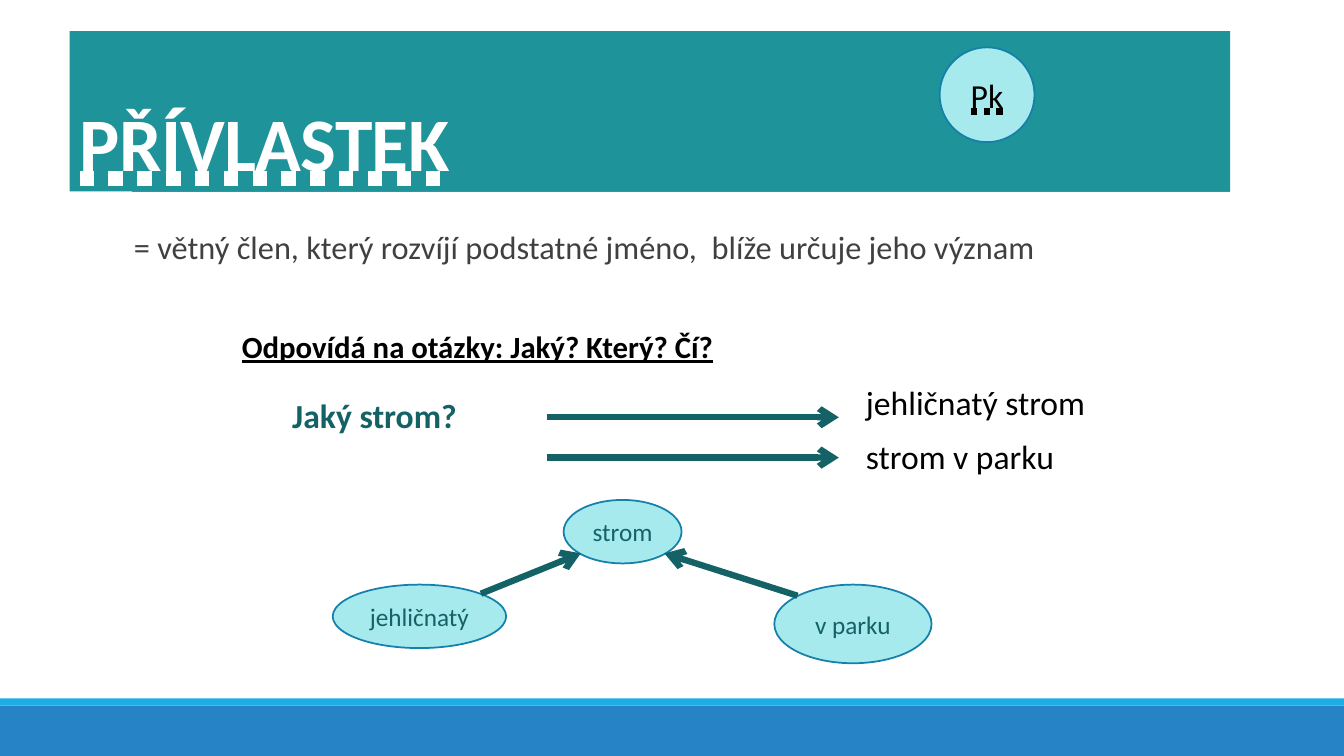
import pptx
import pptx.dml.color
import pptx.enum.shapes
import pptx.enum.text
import pptx.oxml.ns
import pptx.util
from lxml import etree

Inches, Pt = pptx.util.Inches, pptx.util.Pt
ANCHOR = pptx.enum.text.MSO_ANCHOR
ALIGN = pptx.enum.text.PP_ALIGN
DOTTED = pptx.enum.text.MSO_UNDERLINE.DOTTED_HEAVY_LINE
SHAPE = pptx.enum.shapes.MSO_SHAPE

DARK_TEAL, TEAL, PALE_TEAL = "146266", "1E9399", "A6EAEE"
OUTLINE, GREY, BLACK, WHITE = "1580A9", "404040", "000000", "FFFFFF"

HEADING = "PŘÍVLASTEK"
FOOTER_BANDS = [((0, 7, 13.33, 0.5), "2683C6"), ((0, 6.93, 13.33, 0.07), "1CADE4")]
TITLE_RULE = ((1.31, 1.9), (12.2, 1.9))

# text, left, top, width, font size, colour, bold, underline
LINES = [
    ("= větný člen, který rozvíjí podstatné jméno,  blíže určuje jeho význam",
     1.23, 2.2, 9.2, 23.1, GREY, False, False),
    ("Odpovídá na otázky: Jaký? Který? Čí?", 2.3, 3.18, 5.78, 22, BLACK, True, True),
    ("Jaký strom?", 2.8, 3.87, 2.4, 24, DARK_TEAL, True, False),
    ("jehličnatý strom", 8.49, 3.74, 2.4, 24, BLACK, False, False),
    ("strom v parku", 8.49, 4.27, 2.4, 24, BLACK, False, False),
]
LINE_HEIGHT = 0.5

# text, box, font size, colour, underline
BUBBLES = [
    ("strom", (5.59, 4.96, 1.17, 0.63), 18, DARK_TEAL, False),
    ("jehličnatý", (3.3, 5.8, 1.72, 0.63), 18, DARK_TEAL, False),
    ("v parku", (7.68, 5.8, 1.56, 0.78), 18, DARK_TEAL, False),
    ("Pk", (9.32, 0.47, 0.94, 0.94), 24, BLACK, DOTTED),
]
ARROWS = [
    ((4.77, 5.89), (5.76, 5.49)),
    ((7.91, 5.91), (6.59, 5.49)),
    ((5.43, 4.54), (8.32, 4.54)),
    ((5.43, 4.14), (8.32, 4.14)),
]


def rgb(value):
    return pptx.dml.color.RGBColor.from_string(value)


def fill(shape, colour):
    shape.fill.solid()
    shape.fill.fore_color.rgb = rgb(colour)


def style(paragraph, size, colour, bold=False, underline=False):
    font = paragraph.font
    font.name, font.size = "Calibri", Pt(size)
    font.bold, font.color.rgb = bold, rgb(colour)
    if underline:
        paragraph.runs[0].font.underline = underline


def add_shape(slide, kind, box, colour):
    shape = slide.shapes.add_shape(kind, *map(Inches, box))
    shape.shadow.inherit = False
    fill(shape, colour)
    shape.line.fill.background()
    return shape


def add_line(slide, start, end, colour, width):
    line = slide.shapes.add_connector(
        pptx.enum.shapes.MSO_CONNECTOR.STRAIGHT, *map(Inches, start + end))
    line.line.color.rgb = rgb(colour)
    line.line.width = Pt(width)
    etree.SubElement(line._element.spPr, pptx.oxml.ns.qn("a:effectLst"))
    return line


def add_arrow(slide, start, end):
    arrow = add_line(slide, start, end, DARK_TEAL, 4.5)
    outline = arrow.line._get_or_add_ln()
    etree.SubElement(outline, pptx.oxml.ns.qn("a:tailEnd"), type="arrow")


def add_bubble(slide, text, box, size, colour, underline):
    bubble = add_shape(slide, SHAPE.OVAL, box, PALE_TEAL)
    bubble.line.color.rgb = rgb(OUTLINE)
    bubble.line.width = Pt(1.25)
    frame = bubble.text_frame
    frame.text = text
    frame.word_wrap = False
    frame.vertical_anchor = ANCHOR.MIDDLE
    frame.paragraphs[0].alignment = ALIGN.CENTER
    style(frame.paragraphs[0], size, colour, underline=underline)


def add_text(slide, text, left, top, width, size, colour, bold, underline):
    frame = slide.shapes.add_textbox(
        *map(Inches, (left, top, width, LINE_HEIGHT))).text_frame
    frame.text = text
    frame.word_wrap = True
    frame.vertical_anchor = ANCHOR.MIDDLE
    style(frame.paragraphs[0], size, colour, bold, underline)


def format_title(title):
    title.left, title.top = Inches(0.69), Inches(0.31)
    title.width, title.height = Inches(11.51), Inches(1.59)
    fill(title, TEAL)
    frame = title.text_frame
    frame.text = HEADING
    frame.word_wrap = True
    frame.vertical_anchor = ANCHOR.BOTTOM
    paragraph = frame.paragraphs[0]
    paragraph.alignment = ALIGN.LEFT
    paragraph.line_spacing = 0.85
    style(paragraph, 54, WHITE, True, DOTTED)
    paragraph.runs[0].font._element.set("spc", "-50")


def main():
    deck = pptx.Presentation()
    deck.slide_width, deck.slide_height = Inches(13.33), Inches(7.5)
    slide = deck.slides.add_slide(deck.slide_layouts[5])

    rule = add_line(slide, *TITLE_RULE, "808080", 0.5)
    slide.shapes.title._element.addprevious(rule._element)
    format_title(slide.shapes.title)
    for box, colour in FOOTER_BANDS:
        add_shape(slide, SHAPE.RECTANGLE, box, colour)
    for line in LINES:
        add_text(slide, *line)
    for bubble in BUBBLES:
        add_bubble(slide, *bubble)
    for start, end in ARROWS:
        add_arrow(slide, start, end)
    deck.save("out.pptx")


if __name__ == "__main__":
    main()
